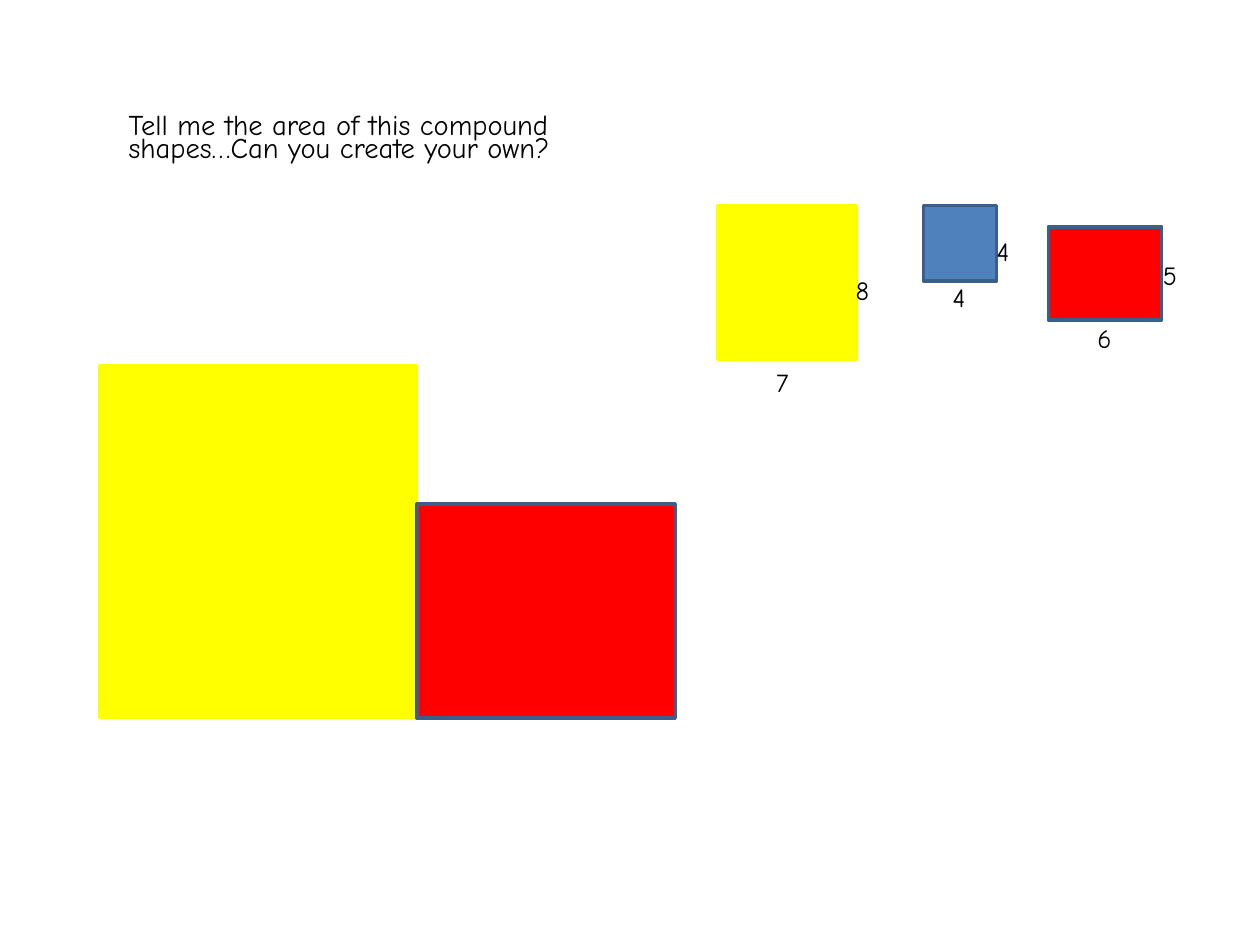
from typing import NamedTuple

from pptx import Presentation
from pptx.dml.color import RGBColor
from pptx.enum.shapes import MSO_SHAPE
from pptx.enum.text import MSO_AUTO_SIZE
from pptx.util import Inches, Pt

RECT = MSO_SHAPE.RECTANGLE
GROW = MSO_AUTO_SIZE.SHAPE_TO_FIT_TEXT
FONT = "Comic Neue"
YELLOW, BLUE, RED = "FFFF00", "4F81BD", "FF0000"
OUTLINE, BLACK = "3A5F8C", "000000"


class Block(NamedTuple):
    x: float
    y: float
    w: float
    h: float
    fill: str
    line: str


class Label(NamedTuple):
    text: str
    x: float
    y: float


SAMPLES = [
    Block(5.7, 1.63, 1.1, 1.22, YELLOW, YELLOW),
    Block(7.33, 1.63, 0.58, 0.6, BLUE, OUTLINE),
    Block(8.32, 1.8, 0.9, 0.74, RED, OUTLINE),
]
COMPOUND = [
    Block(0.79, 2.9, 2.51, 2.79, YELLOW, YELLOW),
    Block(3.31, 4, 2.05, 1.7, RED, OUTLINE),
]
LABELS = [
    Label("6", 8.71, 2.51),
    Label("4", 7.91, 1.82),
    Label("5", 9.23, 2.01),
    Label("7", 6.16, 2.86),
    Label("8", 6.79, 2.13),
    Label("4", 7.56, 2.18),
]


def color(value: str) -> RGBColor:
    return RGBColor.from_string(value)


def add_block(shapes, b: Block) -> None:
    sp = shapes.add_shape(RECT, Inches(b.x), Inches(b.y), Inches(b.w), Inches(b.h))
    sp.shadow.inherit = False
    sp.fill.solid()
    sp.fill.fore_color.rgb = color(b.fill)
    sp.line.color.rgb = color(b.line)
    sp.line.width = Pt(2)


def add_text(shapes, text: str, x: float, y: float, w: float, h: float,
             size: float, inset_x: float, inset_y: float, wrap: bool):
    tf = shapes.add_textbox(Inches(x), Inches(y), Inches(w), Inches(h)).text_frame
    tf.word_wrap = wrap
    tf.margin_left = tf.margin_right = Inches(inset_x)
    tf.margin_top = tf.margin_bottom = Inches(inset_y)
    tf.text = text
    r = tf.paragraphs[0].runs[0]
    r.font.name = FONT
    r.font.size = Pt(size)
    r.font.color.rgb = color(BLACK)
    return tf


def add_label(shapes, label: Label) -> None:
    tf = add_text(shapes, label.text, label.x, label.y, 0.12, 0.35, 15, 0, 0.05, False)
    tf.auto_size = GROW


def main() -> None:
    prs = Presentation()
    prs.slide_width, prs.slide_height = Inches(10), Inches(7.5)
    s = prs.slides.add_slide(prs.slide_layouts[6])
    group = s.shapes.add_group_shape()
    for block in SAMPLES:
        add_block(group.shapes, block)
    for label in LABELS:
        add_label(group.shapes, label)
    for block in COMPOUND:
        add_block(s.shapes, block)
    tf = add_text(s.shapes, "Tell me the area of this compound shapes…Can you create your own?",
                  0.95, 0.88, 3.65, 0.66, 16.3, 0.07, 0.04, True)
    tf.paragraphs[0].line_spacing = 0.7
    prs.save("out.pptx")


if __name__ == "__main__":
    main()
